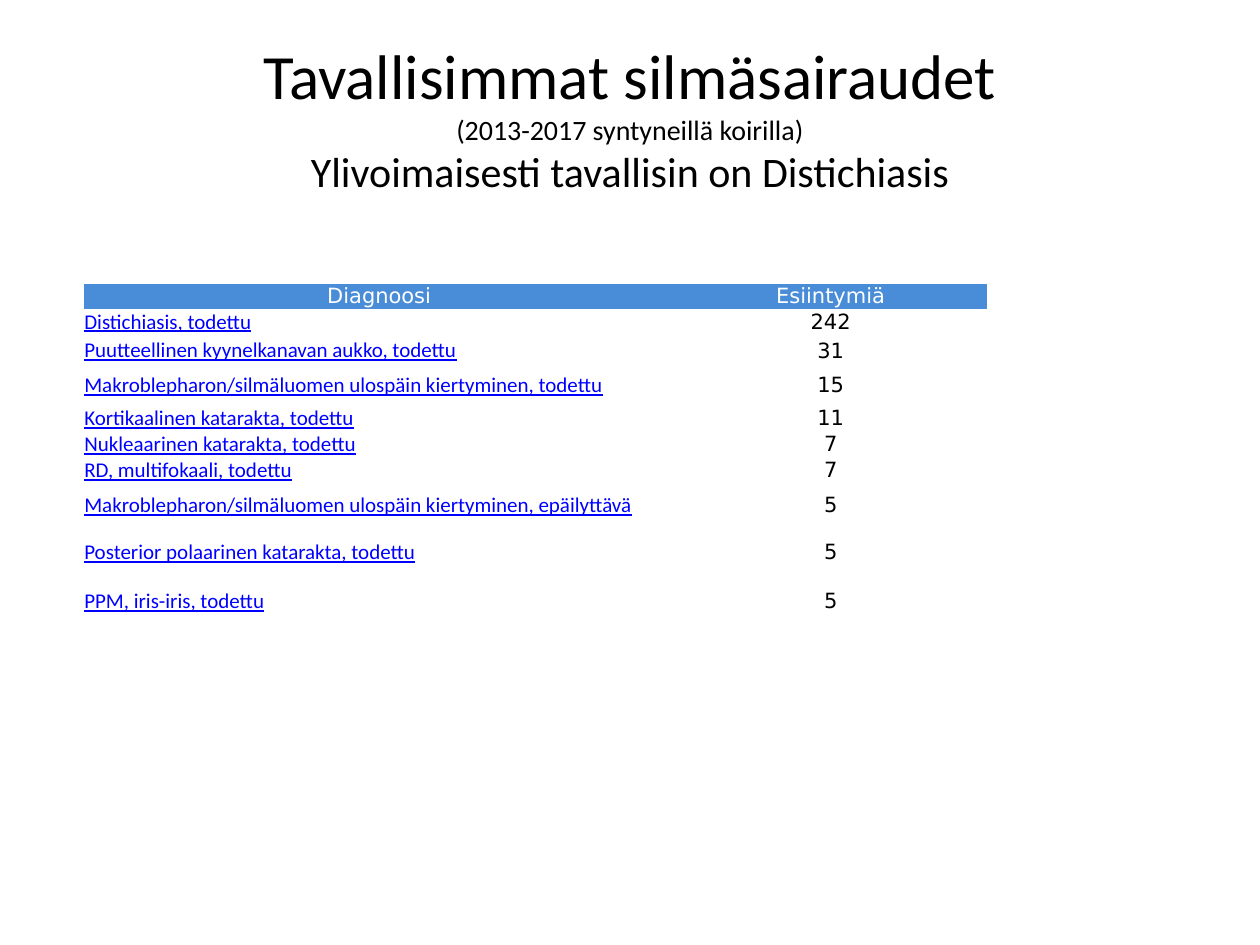
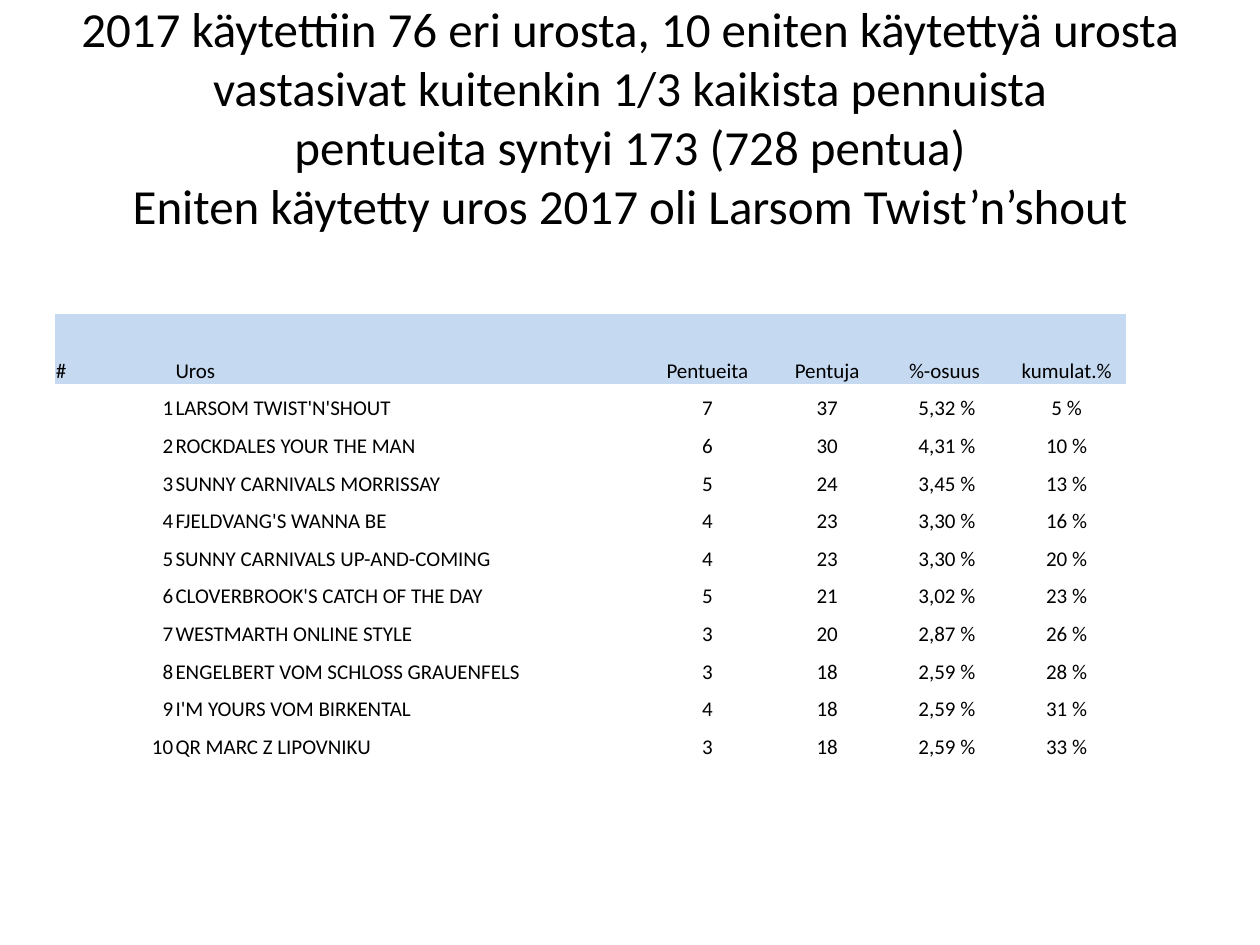
from dataclasses import dataclass

from pptx import Presentation
from pptx.dml.color import RGBColor
from pptx.enum.text import MSO_ANCHOR as Anchor, PP_ALIGN as Align
from pptx.oxml.ns import qn
from pptx.util import Pt

BLACK = RGBColor(0x00, 0x00, 0x00)
WHITE = RGBColor(0xFF, 0xFF, 0xFF)
LINK_BLUE = RGBColor(0x00, 0x00, 0xFF)
HEADER_BLUE = RGBColor(0x49, 0x8C, 0xD8)
HEADER_PALE = RGBColor(0xC5, 0xD9, 0xF1)
PLAIN_TABLE_STYLE = "{2D5ABB26-0587-4C30-8999-92F81FD0307C}"


@dataclass
class TextStyle:
    align: Align = Align.LEFT
    font: str = "Calibri"
    color: RGBColor = BLACK
    size: float = 12
    underline: bool = False

    def apply(self, paragraph):
        paragraph.alignment = self.align
        font = paragraph.font
        font.name, font.size, font.underline = self.font, Pt(self.size), self.underline
        font.color.rgb = self.color


@dataclass
class TableLook:
    header_fill: RGBColor
    body_fill: RGBColor | None
    anchor: Anchor
    inset: float
    header_styles: list
    body_styles: list


class Deck:
    def __init__(self):
        self.presentation = Presentation()
        self.presentation.slide_width, self.presentation.slide_height = Pt(720), Pt(540)
        self.slide = None

    def new_slide(self):
        self.slide = self.presentation.slides.add_slide(self.presentation.slide_layouts[6])

    def title(self, lines):
        """Centred title; each line is a (text, size) pair."""
        box = self.slide.shapes.add_textbox(Pt(36), Pt(21.6), Pt(648), Pt(90))
        frame = box.text_frame
        frame.word_wrap = True
        frame.vertical_anchor = Anchor.MIDDLE
        for index, (text, size) in enumerate(lines):
            paragraph = frame.add_paragraph() if index else frame.paragraphs[0]
            paragraph.text = text
            TextStyle(Align.CENTER, size=size).apply(paragraph)

    def table(self, left, top, widths, heights, rows, look):
        shape = self.slide.shapes.add_table(
            len(rows), len(widths), Pt(left), Pt(top), Pt(sum(widths)), Pt(sum(heights)))
        for style_id in shape.element.iter(qn("a:tableStyleId")):
            style_id.text = PLAIN_TABLE_STYLE
        table = shape.table
        table.first_row = table.horz_banding = False
        for column, width in zip(table.columns, widths):
            column.width = Pt(width)
        for index, (row, height, values) in enumerate(zip(table.rows, heights, rows)):
            row.height = Pt(height)
            styles = look.body_styles if index else look.header_styles
            fill = look.body_fill if index else look.header_fill
            for cell, value, style in zip(row.cells, values, styles):
                self.cell(cell, value, style, fill, look)

    def cell(self, cell, value, style, fill, look):
        cell.margin_left = cell.margin_right = cell.margin_top = Pt(look.inset)
        cell.margin_bottom = 0
        cell.vertical_anchor = look.anchor
        if fill is None:
            cell.fill.background()
        else:
            cell.fill.solid()
            cell.fill.fore_color.rgb = fill
        paragraph = cell.text_frame.paragraphs[0]
        paragraph.text = str(value)
        style.apply(paragraph)


DIAGNOSES = [
    ("Diagnoosi", "Esiintymiä"),
    ("Distichiasis, todettu", 242),
    ("Puutteellinen kyynelkanavan aukko, todettu", 31),
    ("Makroblepharon/silmäluomen ulospäin kiertyminen, todettu", 15),
    ("Kortikaalinen katarakta, todettu", 11),
    ("Nukleaarinen katarakta, todettu", 7),
    ("RD, multifokaali, todettu", 7),
    ("Makroblepharon/silmäluomen ulospäin kiertyminen, epäilyttävä", 5),
    ("Posterior polaarinen katarakta, todettu", 5),
    ("PPM, iris-iris, todettu", 5),
]
DIAGNOSIS_HEIGHTS = [14, 15, 18, 22, 15, 15, 15, 24.5, 29.5, 26.6]

SIRE_HEADER = ("#", "Uros", "Pentueita", "Pentuja", "%-osuus ", "kumulat.%")
SIRES = [
    ("LARSOM TWIST'N'SHOUT", 7, 37, "5,32 %", "5 %"),
    ("ROCKDALES YOUR THE MAN", 6, 30, "4,31 %", "10 %"),
    ("SUNNY CARNIVALS MORRISSAY", 5, 24, "3,45 %", "13 %"),
    ("FJELDVANG'S WANNA BE", 4, 23, "3,30 %", "16 %"),
    ("SUNNY CARNIVALS UP-AND-COMING", 4, 23, "3,30 %", "20 %"),
    ("CLOVERBROOK'S CATCH OF THE DAY", 5, 21, "3,02 %", "23 %"),
    ("WESTMARTH ONLINE STYLE", 3, 20, "2,87 %", "26 %"),
    ("ENGELBERT VOM SCHLOSS GRAUENFELS", 3, 18, "2,59 %", "28 %"),
    ("I'M YOURS VOM BIRKENTAL", 4, 18, "2,59 %", "31 %"),
    ("QR MARC Z LIPOVNIKU", 3, 18, "2,59 %", "33 %"),
]


def add_eye_diseases(deck):
    deck.new_slide()
    deck.title([
        ("Tavallisimmat silmäsairaudet", 36),
        ("(2013-2017 syntyneillä koirilla)", 16),
        ("Ylivoimaisesti tavallisin on Distichiasis", 24),
    ])
    header = TextStyle(Align.CENTER, "DejaVu Sans", WHITE)
    diagnosis = TextStyle(color=LINK_BLUE, underline=True)
    count = TextStyle(Align.CENTER, "DejaVu Sans")
    look = TableLook(HEADER_BLUE, WHITE, Anchor.MIDDLE, 0, [header] * 2, [diagnosis, count])
    deck.table(48.2, 162, [337, 179], DIAGNOSIS_HEIGHTS, DIAGNOSES, look)


def add_most_used_sires(deck):
    deck.new_slide()
    deck.title([(line, 28) for line in (
        "2017 käytettiin 76 eri urosta, 10 eniten käytettyä urosta "
        "vastasivat kuitenkin 1/3 kaikista pennuista",
        "pentueita syntyi 173 (728 pentua)",
        "Eniten käytetty uros 2017 oli Larsom Twist’n’shout",
    )])
    left, right, center = (TextStyle(align) for align in (Align.LEFT, Align.RIGHT, Align.CENTER))
    look = TableLook(HEADER_PALE, None, Anchor.BOTTOM, 0.7,
                     [left, left] + [center] * 4, [right, left] + [center] * 4)
    rows = [SIRE_HEADER] + [(rank, *sire) for rank, sire in enumerate(SIRES, 1)]
    widths = [68.4, 270.5] + [68.4] * 4
    deck.table(31.2, 179.4, widths, [40] + [21.5] * len(SIRES), rows, look)


def main():
    deck = Deck()
    add_eye_diseases(deck)
    add_most_used_sires(deck)
    deck.presentation.save("out.pptx")


if __name__ == "__main__":
    main()
